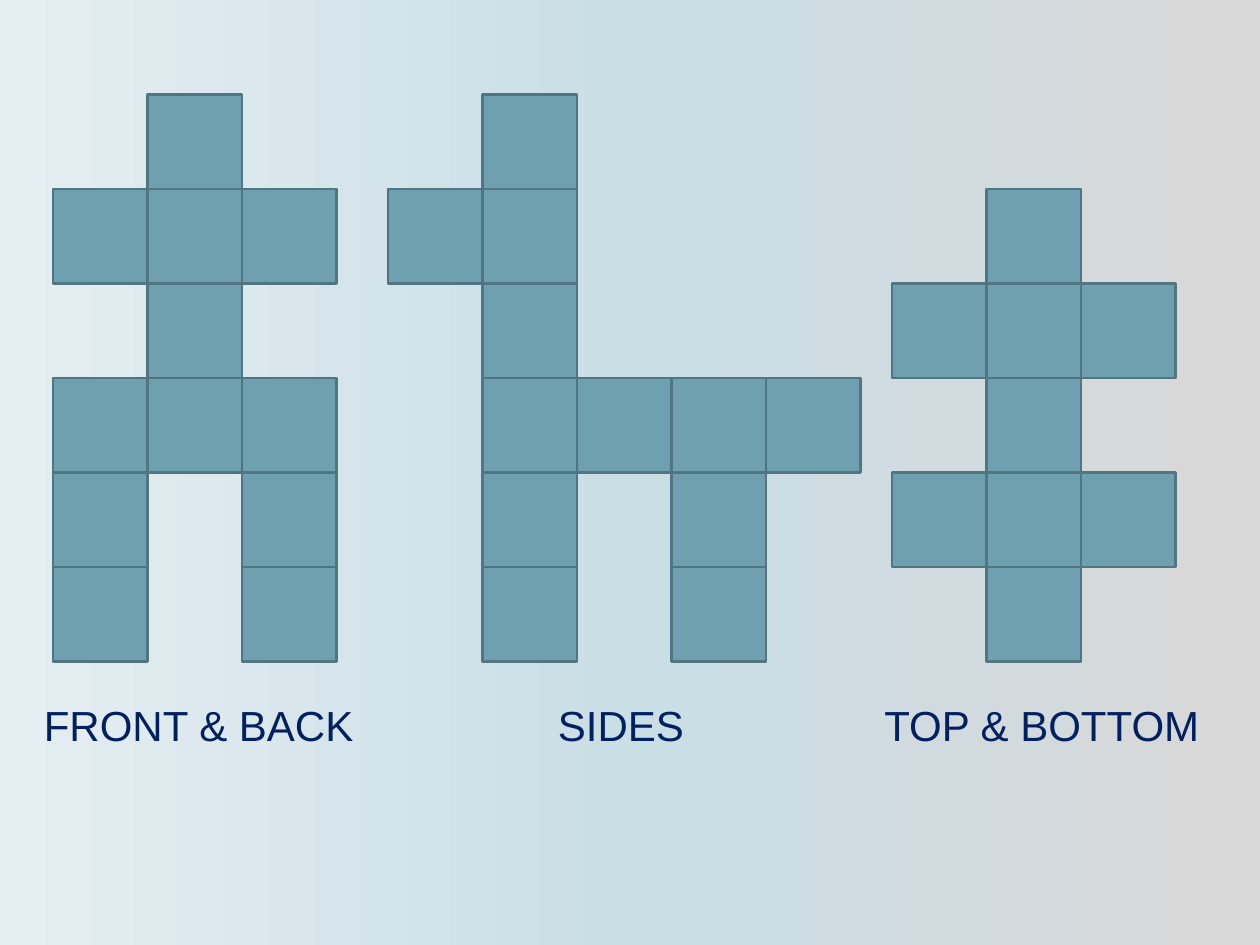
from copy import deepcopy

from pptx import Presentation
from pptx.dml.color import RGBColor
from pptx.enum.shapes import MSO_SHAPE
from pptx.enum.text import MSO_AUTO_SIZE
from pptx.oxml.ns import qn
from pptx.util import Inches, Pt

SIDE = 0.75
TOP = 0.75
STOPS = [(0, "D8D8D8"), (0.5, "CADEE6"), (1, "E5EEF2")]
FONT = {"name": "Arial", "size": Pt(24)}
FRAME = {"word_wrap": True, "auto_size": MSO_AUTO_SIZE.SHAPE_TO_FIT_TEXT}
VIEWS = [
    (0.42, [".#.", "###", ".#.", "###", "#.#", "#.#"], "FRONT & BACK", 0.25, 2.83),
    (3.08, [".#...", "##...", ".#...", ".####", ".#.#.", ".#.#."], "SIDES", 4.33, 1.33),
    (7.08, ["...", ".#.", "###", ".#.", "###", ".#."], "TOP & BOTTOM", 6.92, 2.83),
]


def color(code):
    """Turn a hex string into a colour."""
    return RGBColor.from_string(code)


def style(item, values):
    """Set each named attribute on an item."""
    for name, value in values.items():
        setattr(item, name, value)


def paint(slide):
    """Give the slide its three-stop gradient."""
    fill = slide.background.fill
    fill.gradient()
    fill.gradient_angle = 180
    first = slide.element.find(".//" + qn("a:gs"))
    first.addnext(deepcopy(first))
    for stop, (place, code) in zip(fill.gradient_stops, STOPS):
        stop.position = place
        stop.color.rgb = color(code)


def add_cube(group, left, top):
    """Add one square face to a group."""
    cube = group.shapes.add_shape(
        MSO_SHAPE.RECTANGLE, Inches(left), Inches(top), Inches(SIDE), Inches(SIDE)
    )
    cube.shadow.inherit = False
    cube.fill.solid()
    cube.fill.fore_color.rgb = color("6EA0B0")
    cube.line.color.rgb = color("517682")
    cube.line.width = Pt(1.5)


def add_view(slide, left, rows):
    """Add the squares marked in a grid of rows."""
    group = slide.shapes.add_group_shape()
    for row, marks in enumerate(rows):
        for col, mark in enumerate(marks):
            if mark == "#":
                add_cube(group, left + col * SIDE, TOP + row * SIDE)


def add_label(slide, text, left, width):
    """Add the caption below a view."""
    box = slide.shapes.add_textbox(Inches(left), Inches(5.5), Inches(width), Inches(0.5))
    style(box.text_frame, FRAME)
    run = box.text_frame.paragraphs[0].add_run()
    run.text = text
    style(run.font, FONT)
    run.font.color.rgb = color("002060")


def main():
    """Build the slide and save it."""
    deck = Presentation()
    style(deck, {"slide_width": Inches(10), "slide_height": Inches(7.5)})
    slide = deck.slides.add_slide(deck.slide_layouts[6])
    paint(slide)
    for left, rows, text, start, width in VIEWS:
        add_view(slide, left, rows)
        add_label(slide, text, start, width)
    deck.save("out.pptx")


if __name__ == "__main__":
    main()
